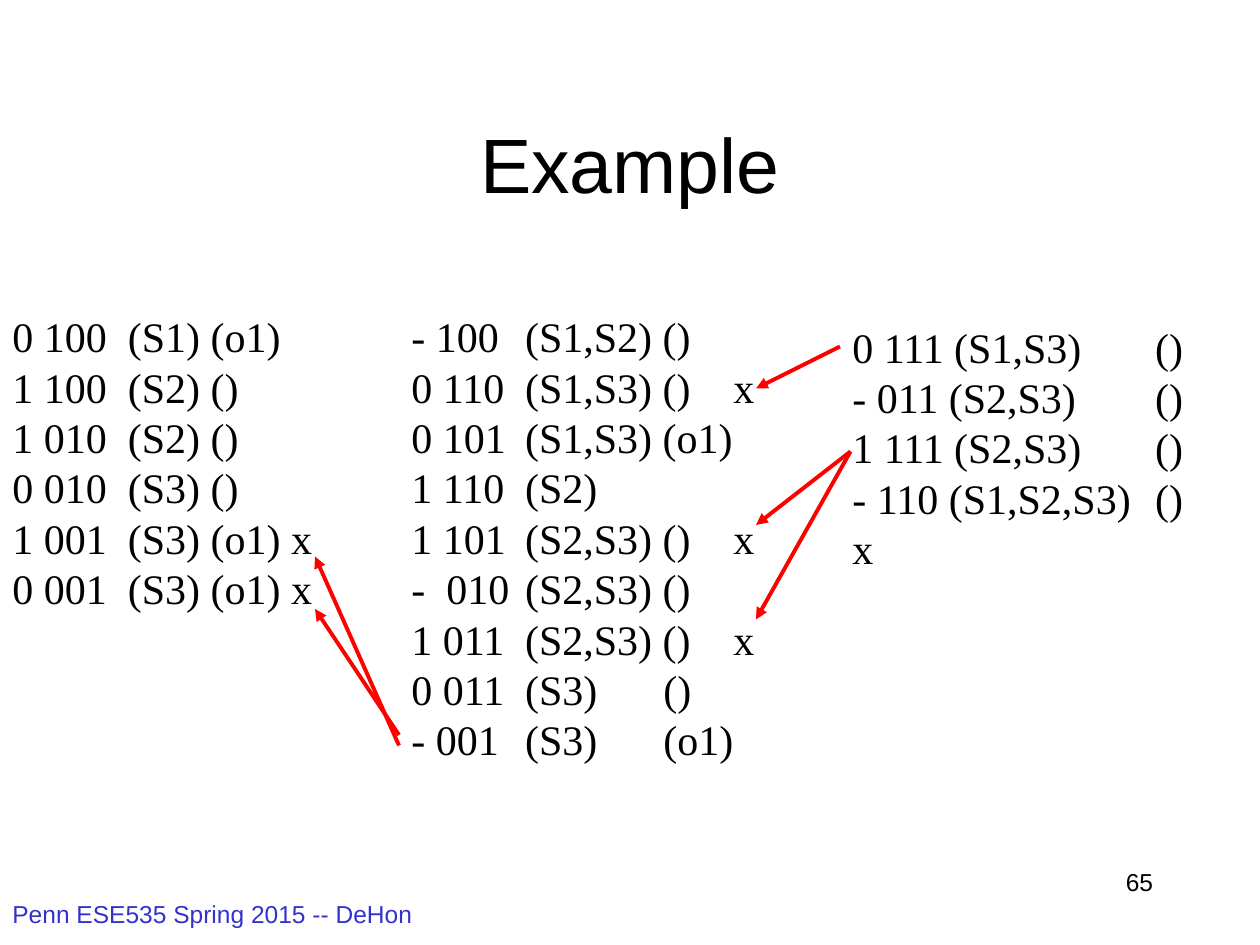
from lxml.etree import SubElement
from pptx import Presentation
from pptx.dml.color import RGBColor
from pptx.enum.shapes import MSO_CONNECTOR
from pptx.enum.text import MSO_ANCHOR, MSO_AUTO_SIZE, PP_ALIGN
from pptx.oxml.ns import qn
from pptx.util import Pt

COLORS = {"text": "000000", "footer": "3333CC", "arrow": "FF0000"}
TITLE = "Example"

# Cube lists: box (left, top, width, height), tab stops, rows
CUBE_LISTS = [
    ((0, 174, 186, 180), [66], [
        "0 100\t(S1) (o1)",
        "1 100\t(S2) ()",
        "1 010\t(S2) ()",
        "0 010\t(S3) ()",
        "1 001\t(S3) (o1) x",
        "0 001\t(S3) (o1) x",
    ]),
    ((228, 174, 211, 266), [20, 65, 144, 184], [
        "- 100\t(S1,S2) ()",
        "0 110\t(S1,S3) ()\tx",
        "0 101\t(S1,S3) (o1)",
        "1 110\t(S2)",
        "1 101\t(S2,S3) ()\tx",
        "-\t010\t(S2,S3) ()",
        "1 011\t(S2,S3) ()\tx",
        "0 011\t(S3)\t()",
        "- 001\t(S3)\t(o1)",
    ]),
    ((480, 180, 220, 122), [173], [
        "0 111 (S1,S3)\t()",
        "- 011 (S2,S3)\t()",
        "1 111 (S2,S3)\t()",
        "- 110 (S1,S2,S3)\t() x",
    ]),
]

# Arrows from a merged cube to the cubes it covers: start, ends
ARROWS = [
    ((228, 420), [(180, 348)]),
    ((228, 426), [(180, 318)]),
    ((480, 198), [(432, 222)]),
    ((486, 258), [(432, 300), (432, 354)]),
]

# Footer items: box, text, colour, alignment
FOOTERS = [
    ((0, 510, 276, 30), "Penn ESE535 Spring 2015 -- DeHon", "footer", PP_ALIGN.LEFT),
    ((516, 492, 150, 36), "65", "text", PP_ALIGN.RIGHT),
]


def color(name):
    return RGBColor.from_string(COLORS[name])


def write(sp, lines, size, font, color_name="text", align=PP_ALIGN.LEFT):
    tf = sp.text_frame
    tf.text = "\n".join(lines)
    for p in tf.paragraphs:
        p.alignment = align
        for r in p.runs:
            r.font.size = Pt(size)
            r.font.name = font
            r.font.color.rgb = color(color_name)
    return tf


def add_box(slide, box):
    return slide.shapes.add_textbox(*map(Pt, box))


def set_tabs(p, stops):
    tab_list = SubElement(p._p.get_or_add_pPr(), qn("a:tabLst"))
    for stop in stops:
        SubElement(tab_list, qn("a:tab"), pos=str(Pt(stop)), algn="l")


def add_arrow(slide, start, end):
    sp = slide.shapes.add_connector(MSO_CONNECTOR.STRAIGHT, *map(Pt, start + end))
    sp.line.color.rgb = color("arrow")
    sp.line.width = Pt(2.25)
    SubElement(sp.line._get_or_add_ln(), qn("a:tailEnd"), type="triangle")
    SubElement(sp._element.spPr, qn("a:effectLst"))


def main():
    prs = Presentation()
    prs.slide_width, prs.slide_height = Pt(720), Pt(540)
    slide = prs.slides.add_slide(prs.slide_layouts[5])

    # Title
    title = slide.shapes.title
    title.left, title.top, title.width, title.height = map(Pt, (54, 48, 612, 90))
    tf = write(title, [TITLE], 44, "Arial", align=PP_ALIGN.CENTER)
    tf.vertical_anchor = MSO_ANCHOR.MIDDLE

    # Footer and slide number
    for box, text, color_name, align in FOOTERS:
        tf = write(add_box(slide, box), [text], 14, "Arial", color_name, align)
        tf.word_wrap = True

    # Cube lists
    for box, stops, rows in CUBE_LISTS:
        tf = write(add_box(slide, box), rows, 24, "Times New Roman")
        tf.word_wrap = False
        tf.auto_size = MSO_AUTO_SIZE.SHAPE_TO_FIT_TEXT
        for p in tf.paragraphs:
            set_tabs(p, stops)

    # Arrows
    for start, ends in ARROWS:
        for end in ends:
            add_arrow(slide, start, end)

    prs.save("out.pptx")


if __name__ == "__main__":
    main()
